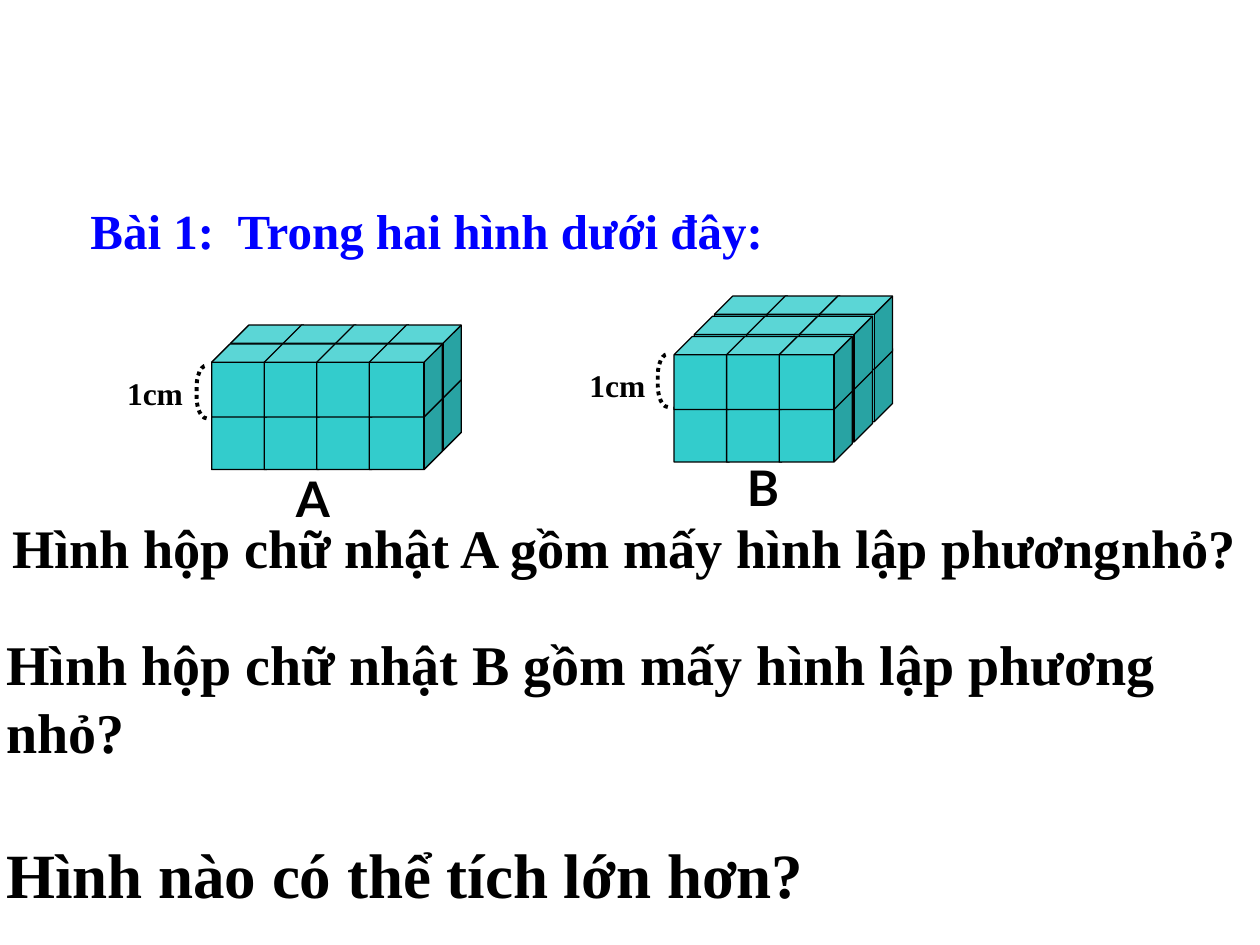
from pptx import Presentation
from pptx.dml.color import RGBColor
from pptx.enum.dml import MSO_LINE
from pptx.enum.shapes import MSO_SHAPE
from pptx.enum.text import MSO_AUTO_SIZE, PP_ALIGN
from pptx.util import Inches, Pt

CUBE, BRACKET = MSO_SHAPE.CUBE, MSO_SHAPE.LEFT_BRACKET
DOTTED = MSO_LINE.ROUND_DOT
FIT_SHAPE = MSO_AUTO_SIZE.SHAPE_TO_FIT_TEXT
JUSTIFY = PP_ALIGN.JUSTIFY

THEME = {
    "black": RGBColor(0x00, 0x00, 0x00),
    "blue": RGBColor(0x00, 0x00, 0xFF),
    "cube": RGBColor(0x33, 0xCC, 0xCC),
    "body": "Times New Roman",
    "label": "Lato",
    "sizes": {"unit": 18, "name": 28, "title": 28,
              "question_a": 31, "question_b": 32, "compare": 36},
}

CUBE_SIZE = 0.58
CUBE_STEP = 0.417
LAYERS = 2

# left and top of the upper front cube, columns, rows, shift from row to row
SOLIDS = [
    (1.68, 2.73, 4, 2, 0.15),
    (5.35, 2.67, 3, 3, 0.16),
]
BRACKETS = [(1.56, 2.9), (5.22, 2.81)]

# text, left, top, width, height, size, font, colour, wrap
TEXTS = [
    ("1cm", 0.91, 2.92, 0.65, 0.4, "unit", "body", "black", False),
    ("1cm", 4.58, 2.86, 0.65, 0.4, "unit", "body", "black", False),
    ("A", 2.25, 3.67, 0.6, 0.57, "name", "label", "black", True),
    ("B", 5.83, 3.58, 0.33, 0.57, "name", "label", "black", True),
    ("Hình hộp chữ nhật A gồm mấy hình lập phươngnhỏ?",
     0, 4.03, 10, 0.62, "question_a", "body", "black", True),
    ("Hình hộp chữ nhật B gồm mấy hình lập phương nhỏ?",
     -0.05, 4.95, 10.05, 1.18, "question_b", "body", "black", True),
    ("Hình nào có thể tích lớn hơn?",
     -0.05, 6.58, 8, 0.71, "compare", "body", "black", True),
]
TITLE = ("Bài 1:  Trong hai hình dưới đây:",
         0.62, 1.54, 5.6, 0.57, "title", "body", "blue", False)


def add_outlined(slide, kind, left, top, width, height, adjustment, line_width):
    s = slide.shapes.add_shape(kind, Inches(left), Inches(top),
                               Inches(width), Inches(height))
    s.adjustments[0] = adjustment
    s.shadow.inherit = False
    s.line.color.rgb = THEME["black"]
    s.line.width = Pt(line_width)
    return s


def add_solid(slide, left, top, columns, rows, shift):
    """Stack cubes from the bottom layer up, back row first."""
    for layer in reversed(range(LAYERS)):
        for row in reversed(range(rows)):
            for column in range(columns):
                s = add_outlined(slide, CUBE,
                                 left + column * CUBE_STEP + row * shift,
                                 top + layer * CUBE_STEP - row * shift,
                                 CUBE_SIZE, CUBE_SIZE, 0.25, 0.75)
                s.fill.solid()
                s.fill.fore_color.rgb = THEME["cube"]


def add_bracket(slide, left, top):
    s = add_outlined(slide, BRACKET, left, top, 0.08, 0.42, 2.15, 2.25)
    s.fill.background()
    s.line.dash_style = DOTTED


def add_text(slide, text, left, top, width, height, size, font, color, wrap):
    box = slide.shapes.add_textbox(Inches(left), Inches(top),
                                   Inches(width), Inches(height))
    tf = box.text_frame
    tf.word_wrap = wrap
    tf.auto_size = FIT_SHAPE
    tf.text = text
    p = tf.paragraphs[0]
    r = p.runs[0]
    r.font.name = THEME[font]
    r.font.size = Pt(THEME["sizes"][size])
    r.font.bold = True
    r.font.color.rgb = THEME[color]
    return p


def main():
    prs = Presentation()
    prs.slide_width, prs.slide_height = Inches(10), Inches(7.5)
    slide = prs.slides.add_slide(prs.slide_layouts[6])
    for solid in SOLIDS:
        add_solid(slide, *solid)
    for bracket in BRACKETS:
        add_bracket(slide, *bracket)
    for text in TEXTS:
        add_text(slide, *text)
    add_text(slide, *TITLE).alignment = JUSTIFY
    prs.save("out.pptx")


if __name__ == "__main__":
    main()
